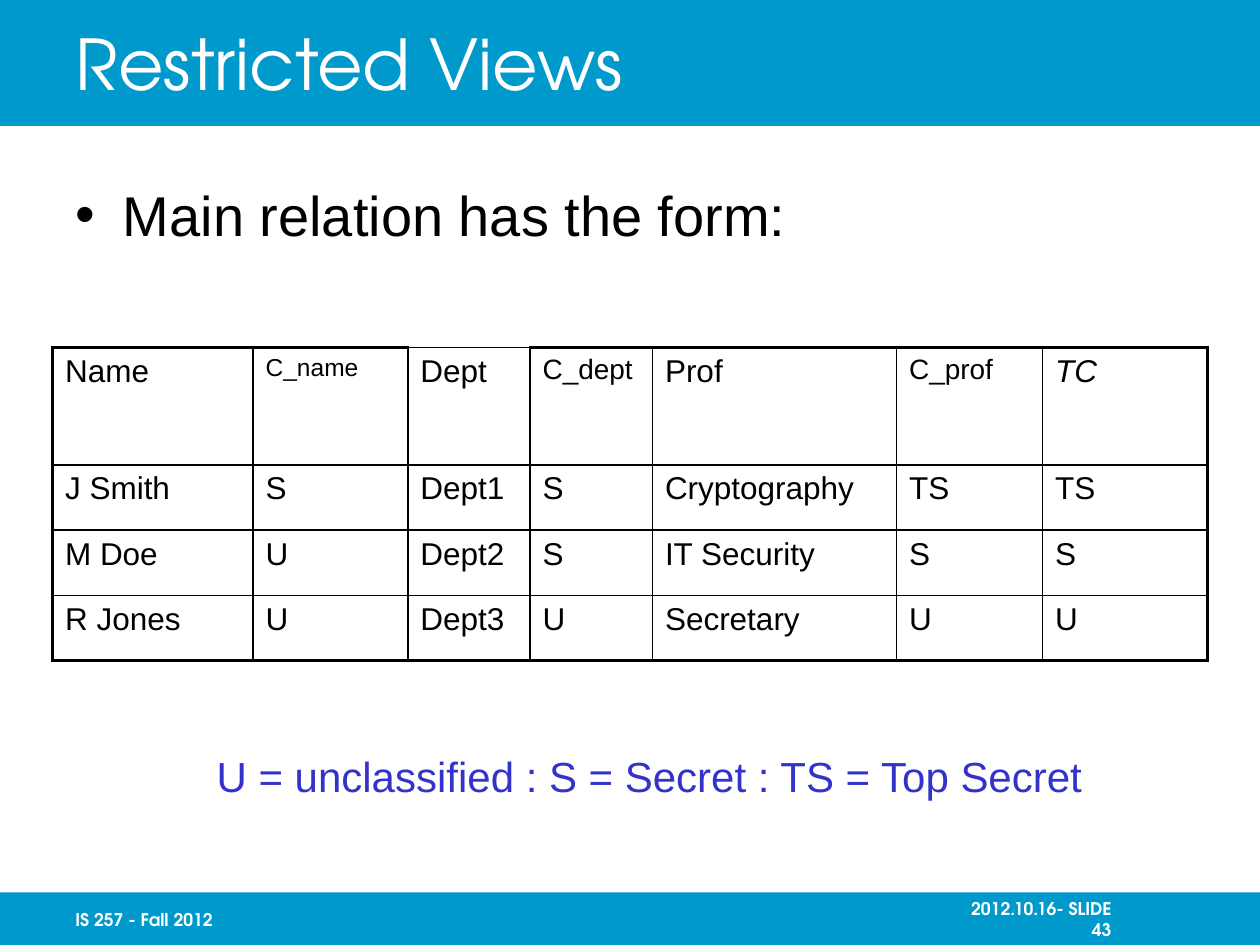
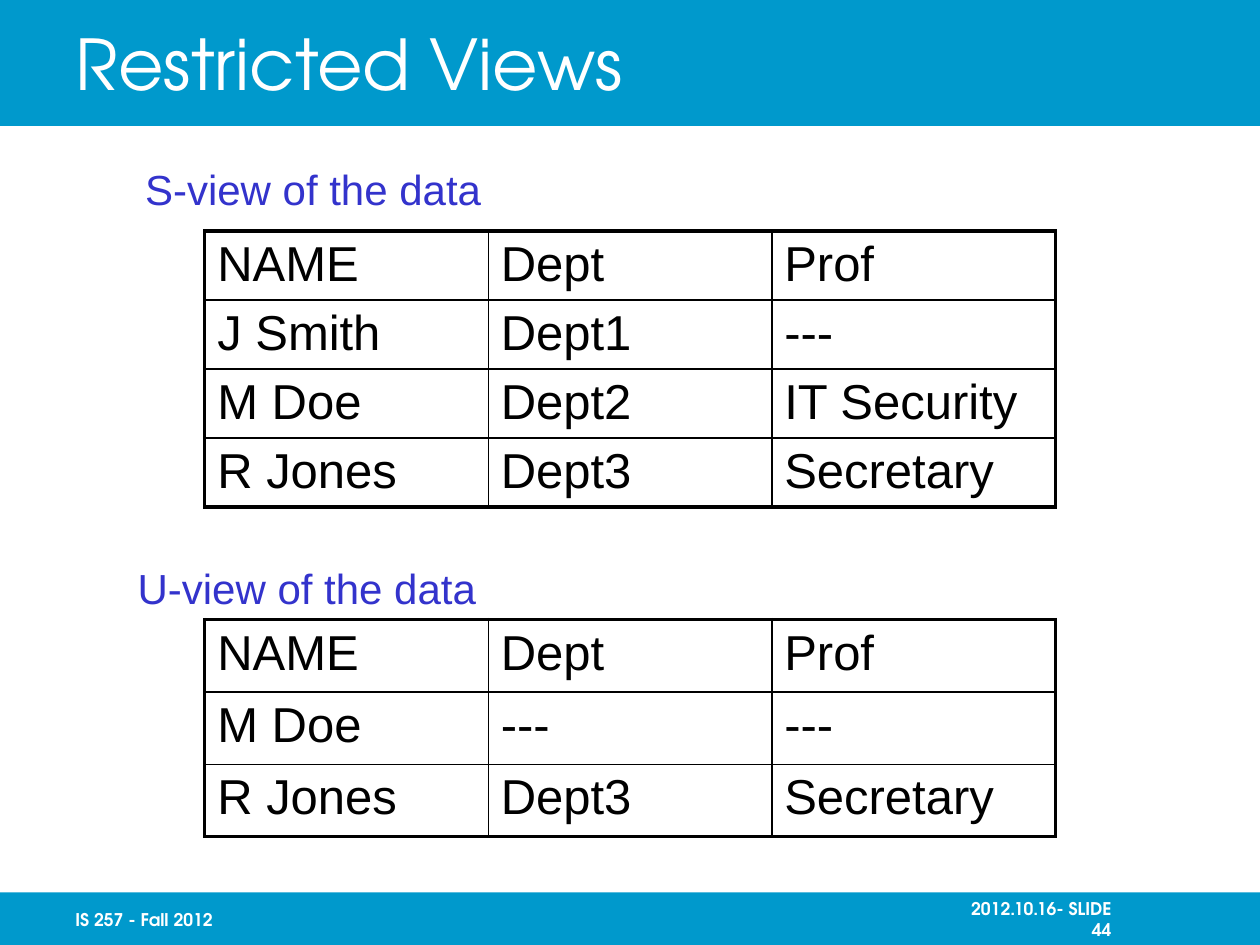
from pptx import Presentation
from pptx.dml.color import RGBColor
from pptx.enum.shapes import MSO_SHAPE as Shape
from pptx.enum.text import MSO_ANCHOR as Anchor, PP_ALIGN as Align
from pptx.oxml import parse_xml
from pptx.oxml.ns import nsdecls
from pptx.util import Inches, Pt

# Colours, fonts and line widths
BAND_BLUE = RGBColor(0x00, 0x99, 0xCC)
CAPTION_BLUE = RGBColor(0x33, 0x33, 0xCC)
WHITE = RGBColor(0xFF, 0xFF, 0xFF)
BLACK = RGBColor(0x00, 0x00, 0x00)
HEADING_FONT = "TeX Gyre Adventor"
BODY_FONT = "Arial"
THICK, THIN = 2.25, 1

# Square grid of 24 columns by 18 rows
COLUMNS, ROWS = 24, 18
WIDTH, HEIGHT = Inches(10), Inches(7.5)


def grid(*units):
    """Turn grid units into lengths; columns and rows are equally long."""
    return [round(WIDTH * unit / COLUMNS) for unit in units]


def border(side, points):
    return parse_xml(
        f'<a:{side} {nsdecls("a")} w="{Pt(points)}"><a:solidFill>'
        f'<a:srgbClr val="{BLACK}"/></a:solidFill></a:{side}>')


class Deck:
    def __init__(self):
        self.presentation = Presentation()
        self.presentation.slide_width = WIDTH
        self.presentation.slide_height = HEIGHT
        self.slide = None

    def start_slide(self, layout_index, title, number):
        layout = self.presentation.slide_layouts[layout_index]
        self.slide = self.presentation.slides.add_slide(layout)
        self.placeholder(self.slide.shapes.title, (1.2, 0, 20.4, 2.4), title,
                         Anchor.MIDDLE, 40, HEADING_FONT, WHITE)
        self.footer((1.2, 17, 5, 1), "IS 257 - Fall 2012", Anchor.MIDDLE, Align.LEFT)
        self.footer((17.8, 17, 5, 1), f"2012.10.16- SLIDE {number}",
                    Anchor.BOTTOM, Align.RIGHT, right=0.68)

    def add_run(self, paragraph, text, size, font=BODY_FONT, color=BLACK,
                bold=False, italic=False):
        run = paragraph.add_run()
        run.text = text
        run.font.size = Pt(size)
        run.font.name = font
        run.font.color.rgb = color
        run.font.bold = bold
        run.font.italic = italic

    def master_band(self, *box):
        """Draw a band and move it behind everything on the slide master."""
        band = self.slide.shapes.add_shape(Shape.RECTANGLE, *grid(*box))
        band.shadow.inherit = False
        band.fill.solid()
        band.fill.fore_color.rgb = BAND_BLUE
        band.line.fill.background()
        self.presentation.slide_master.shapes.element.insert(2, band.element)

    def placeholder(self, shape, box, text, anchor, size, font, color):
        shape.left, shape.top, shape.width, shape.height = grid(*box)
        frame = shape.text_frame
        frame.vertical_anchor = anchor
        paragraph = frame.paragraphs[0]
        paragraph.alignment = Align.LEFT
        paragraph.space_before = Pt(0)
        self.add_run(paragraph, text, size, font, color)
        return frame

    def bullet(self, text):
        frame = self.placeholder(self.slide.placeholders[1], (1.2, 3.2, 21.6, 13),
                                 text, Anchor.TOP, 32, BODY_FONT, BLACK)
        frame.margin_top = Inches(0.1)

    def text_box(self, box, alignment):
        frame = self.slide.shapes.add_textbox(*grid(*box)).text_frame
        frame.paragraphs[0].alignment = alignment
        return frame

    def footer(self, box, text, anchor, alignment, right=0):
        frame = self.text_box(box, alignment)
        frame.word_wrap = True
        frame.vertical_anchor = anchor
        frame.margin_right = Inches(right)
        frame.margin_bottom = Inches(0.04)
        self.add_run(frame.paragraphs[0], text, 10, HEADING_FONT, WHITE, bold=True)

    def caption(self, box, text):
        frame = self.text_box(box, Align.CENTER)
        frame.word_wrap = False
        self.add_run(frame.paragraphs[0], text, 24, color=CAPTION_BLUE)

    def table(self, left, top, widths, heights, records, size,
              header_sizes=None, italic_headers=(), thin_tops=()):
        box = grid(left, top, sum(widths), sum(heights))
        table = self.slide.shapes.add_table(len(heights), len(widths), *box).table
        table.first_row = table.horz_banding = False
        for column, width in zip(table.columns, grid(*widths)):
            column.width = width
        for row, height in zip(table.rows, grid(*heights)):
            row.height = height
        last_row, last_column = len(heights) - 1, len(widths) - 1

        for r, record in enumerate(records):
            for c, text in enumerate(record):
                cell = table.cell(r, c)
                cell.fill.background()
                cell.margin_bottom = Inches(0.03)
                text_size = header_sizes[c] if header_sizes and r == 0 else size
                self.add_run(cell.text_frame.paragraphs[0], text, text_size,
                             italic=r == 0 and text in italic_headers)
                # Thick lines around the table, thin ones inside
                thick_sides = {
                    "lnL": c == 0,
                    "lnR": c == last_column,
                    "lnT": r == 0 and text not in thin_tops,
                    "lnB": r == last_row,
                }
                properties = cell.fill._xPr
                for i, (side, thick) in enumerate(thick_sides.items()):
                    properties.insert(i, border(side, THICK if thick else THIN))


def main():
    deck = Deck()

    # Main relation
    deck.start_slide(1, "Restricted Views", 43)
    deck.master_band(0, 0, COLUMNS, 2.4)
    deck.master_band(0, 17, COLUMNS, 1)
    deck.bullet("Main relation has the form:")
    deck.table(
        1, 6.62, (3.82, 2.95, 2.33, 2.33, 4.65, 2.78, 3.14), (2.24, 1.24, 1.24, 1.24),
        [("Name", "C_name", "Dept", "C_dept", "Prof", "C_prof", "TC"),
         ("J Smith", "S", "Dept1", "S", "Cryptography", "TS", "TS"),
         ("M Doe", "U", "Dept2", "S", "IT Security", "S", "S"),
         ("R Jones", "U", "Dept3", "U", "Secretary", "U", "U")],
        18, header_sizes=(18, 14, 18, 16, 18, 16, 18),
        italic_headers=("TC",), thin_tops=("Dept",))
    deck.caption((3.82, 14.18, 17.1, 1.2),
                 "U = unclassified : S = Secret : TS = Top Secret")

    # Views by clearance
    deck.start_slide(5, "Restricted Views", 44)
    header = ("NAME", "Dept", "Prof")
    jones = ("R Jones", "Dept3", "Secretary")
    secret_view = [header, ("J Smith", "Dept1", "---"),
                   ("M Doe", "Dept2", "IT Security"), jones]
    unclassified_view = [header, ("M Doe", "---", "---"), jones]
    for top, row_height, records in ((4.4, 1.28, secret_view),
                                     (11.8, 1.38, unclassified_view)):
        deck.table(3.9, top, [5.4] * 3, [row_height] * len(records), records, 28)
    deck.caption((2.52, 3, 6.89, 1.2), "S-view of the data")
    deck.caption((2.38, 10.6, 6.93, 1.2), "U-view of the data")

    deck.presentation.save("out.pptx")


if __name__ == "__main__":
    main()
